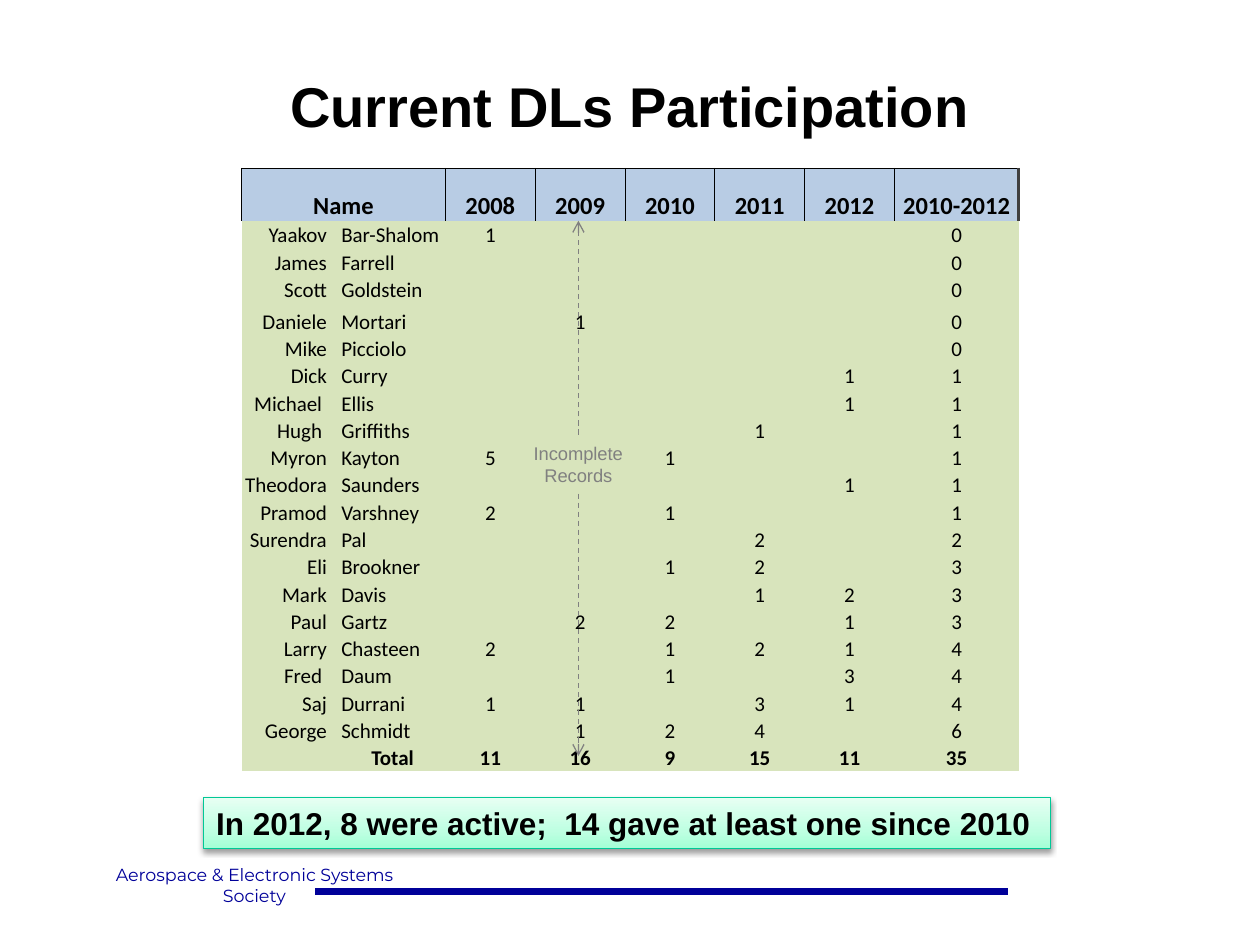
from copy import deepcopy

from lxml.etree import SubElement
from pptx import Presentation
from pptx.dml.color import RGBColor
from pptx.enum.dml import MSO_LINE
from pptx.enum.shapes import MSO_CONNECTOR, MSO_SHAPE
from pptx.enum.text import MSO_ANCHOR, PP_ALIGN
from pptx.oxml.ns import qn
from pptx.util import Cm, Pt


class Theme:
    ink = RGBColor.from_string("000000")
    navy = RGBColor.from_string("000099")
    gray = RGBColor.from_string("808080")
    head = RGBColor.from_string("B8CCE4")
    body = RGBColor.from_string("D8E4BC")
    edge = RGBColor.from_string("00C896")
    mint = [(0, "A5FFD6"), (0.35, "BFFFE2"), (1, "E7FFF3")]
    title = {"size": Pt(32), "name": "Arial", "bold": True}
    note = {"size": Pt(18), "name": "Arial", "bold": True}
    label = {"size": Pt(10.5), "name": "Arial"}
    foot = {"size": Pt(10), "name": "Montserrat"}
    top = {"size": Pt(14), "name": "Calibri", "bold": True}
    cell = {"size": Pt(12), "name": "Calibri", "bold": False}
    total = {"size": Pt(12), "name": "Calibri", "bold": True}


def write(frame, lines, look, color=Theme.ink, align=PP_ALIGN.CENTER):
    """Fill a text frame with one formatted paragraph per line."""
    for i, line in enumerate(lines):
        para = frame.add_paragraph() if i else frame.paragraphs[0]
        para.alignment = align
        run = para.add_run()
        run.text = line
        run.font.color.rgb = color
        for key, value in look.items():
            setattr(run.font, key, value)


def link(x1, y1, x2, y2, color, width):
    """Draw a straight line without a shadow."""
    line = slide.shapes.add_connector(
        MSO_CONNECTOR.STRAIGHT, Cm(x1), Cm(y1), Cm(x2), Cm(y2))
    line.line.color.rgb = color
    line.line.width = Pt(width)
    SubElement(line._element.spPr, qn("a:effectLst"))
    return line


deck = Presentation()
deck.slide_width, deck.slide_height = Cm(25.4), Cm(19.05)
slide = deck.slides.add_slide(deck.slide_layouts[5])

# Footer
link(6.35, 17.98, 20.32, 17.98, Theme.navy, 4)
foot = slide.shapes.add_textbox(Cm(1.7), Cm(17.3), Cm(6.86), Cm(1.14))
foot.text_frame.word_wrap = False
foot.text_frame.margin_top = 0.12 and Cm(0.12)
write(foot.text_frame, ["Aerospace & Electronic Systems", "Society"],
      Theme.foot, Theme.navy)

# Title
title = slide.shapes.title
spot = {"left": Cm(1.9), "top": Cm(1.27), "width": Cm(21.6), "height": Cm(1.7)}
for key, value in spot.items():
    setattr(title, key, value)
title.text_frame.vertical_anchor = MSO_ANCHOR.MIDDLE
write(title.text_frame, ["Current DLs Participation"], Theme.title)

# Table: first name, gap, last name, five years, sum
data = [row.split(",") for row in (
    "Name,,2008,2009,2010,2011,2012,2010-2012",
    "Yaakov,Bar-Shalom,1,,,,,0",
    "James,Farrell,,,,,,0",
    "Scott,Goldstein,,,,,,0",
    "Daniele,Mortari,,1,,,,0",
    "Mike,Picciolo,,,,,,0",
    "Dick,Curry,,,,,1,1",
    "Michael ,Ellis,,,,,1,1",
    "Hugh ,Griffiths,,,,1,,1",
    "Myron,Kayton,5,,1,,,1",
    "Theodora,Saunders,,,,,1,1",
    "Pramod,Varshney,2,,1,,,1",
    "Surendra,Pal,,,,2,,2",
    "Eli,Brookner,,,1,2,,3",
    "Mark,Davis,,,,1,2,3",
    "Paul,Gartz,,2,2,,1,3",
    "Larry,Chasteen,2,,1,2,1,4",
    "Fred ,Daum,,,1,,3,4",
    "Saj,Durrani,1,1,,3,1,4",
    "George,Schmidt,,1,2,4,,6",
    ",Total,11,16,9,15,11,35",
)]
cols = [1.75, 0.23, 2.13] + [1.81] * 5 + [2.51]
rows = [1.07] + [0.55] * 3 + [0.64] + [0.55] * 16
last = len(rows) - 1
table = slide.shapes.add_table(len(rows), len(cols), Cm(4.87), Cm(3.39),
                               Cm(sum(cols)), Cm(sum(rows))).table
table.first_row = table.horz_banding = False
plain = "{2D5ABB26-0587-4C30-8999-92F81FD0307C}"
table._tbl.tblPr.find(qn("a:tableStyleId")).text = plain
for col, width in zip(table.columns, cols):
    col.width = Cm(width)
for row, height in zip(table.rows, rows):
    row.height = Cm(height)
table.cell(0, 0).merge(table.cell(0, 2))

pad = {"margin_left": Cm(0.03), "margin_right": Cm(0.03),
       "margin_top": Cm(0.03), "margin_bottom": 0,
       "vertical_anchor": MSO_ANCHOR.BOTTOM}
for r, line in enumerate(data):
    line.insert(1, "")
    look = Theme.top if r == 0 else Theme.total if r == last else Theme.cell
    for c, text in enumerate(line):
        cell = table.cell(r, c)
        for key, value in pad.items():
            setattr(cell, key, value)
        if r == 0:
            for side in "LRT":
                thick = side == "R" and c == len(cols) - 1
                edge = SubElement(cell._tc.get_or_add_tcPr(),
                                  qn(f"a:ln{side}"),
                                  w=str(Pt(2 if thick else 0.5)))
                fill = SubElement(edge, qn("a:solidFill"))
                SubElement(fill, qn("a:srgbClr"),
                           val="3F3F3F" if thick else str(Theme.ink))
        cell.fill.solid()
        cell.fill.fore_color.rgb = Theme.body if r else Theme.head
        align = PP_ALIGN.CENTER
        if 0 < r < last:
            align = {0: PP_ALIGN.RIGHT, 2: PP_ALIGN.LEFT}.get(c, align)
        if text:
            write(cell.text_frame, [text], look, align=align)
        else:
            SubElement(cell.text_frame.paragraphs[0]._p,
                       qn("a:endParaRPr"), sz="1200")

# Incomplete records: label with an arrow up and an arrow down
label = slide.shapes.add_textbox(Cm(10.49), Cm(8.76), Cm(2.34), Cm(1.19))
label.text_frame.word_wrap = False
label.text_frame.vertical_anchor = MSO_ANCHOR.MIDDLE
write(label.text_frame, ["Incomplete", "Records"], Theme.label, Theme.gray)
for side, start, end in ((0, 8.76, 4.45), (2, 9.95, 15.24)):
    arrow = link(11.66, start, 11.66, end, Theme.gray, 0.75)
    arrow.begin_connect(label, side)
    arrow.line.dash_style = MSO_LINE.DASH
    SubElement(arrow.line._get_or_add_ln(), qn("a:tailEnd"), type="arrow")

# Summary banner
note = slide.shapes.add_shape(
    MSO_SHAPE.RECTANGLE, Cm(4.11), Cm(16.08), Cm(17.07), Cm(1.02))
note.line.color.rgb = Theme.edge
note.line.width = Pt(0.75)
note.fill.gradient()
note.fill.gradient_angle = 90
stops = note._element.spPr.find(".//" + qn("a:gsLst"))
stops.append(deepcopy(stops[-1]))
for stop, (place, color) in zip(note.fill.gradient_stops, Theme.mint):
    stop.position = place
    stop.color.rgb = RGBColor.from_string(color)
note.shadow.inherit = False
shade = SubElement(note._element.spPr.find(qn("a:effectLst")),
                   qn("a:outerShdw"), blurRad="40000", dist="20000",
                   dir="5400000", rotWithShape="0")
tone = SubElement(shade, qn("a:srgbClr"), val=str(Theme.ink))
SubElement(tone, qn("a:alpha"), val="38000")
note.text_frame.word_wrap = True
write(note.text_frame,
      ["In 2012, 8 were active;  14 gave at least one since 2010"],
      Theme.note, align=PP_ALIGN.LEFT)

deck.save("out.pptx")
